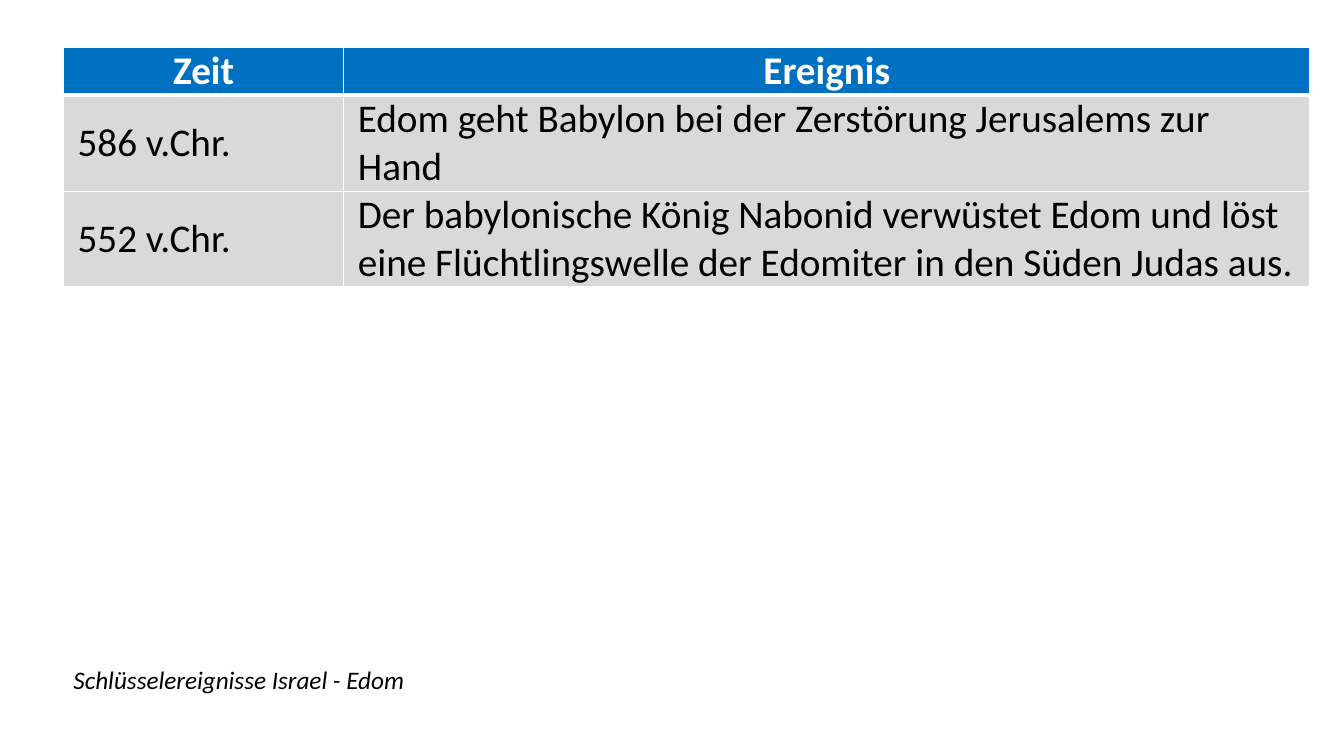
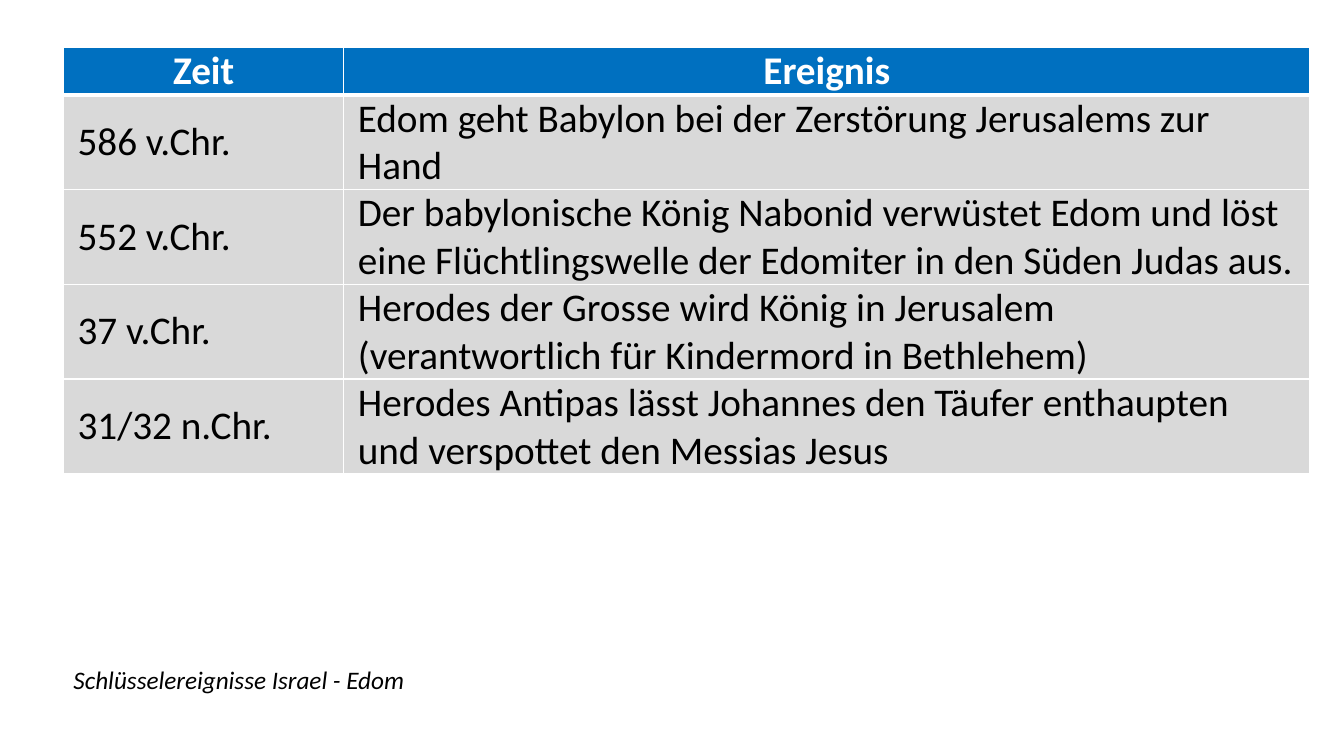
from pptx import Presentation
from pptx import util as u
from pptx.dml.color import RGBColor
from pptx.enum import text
from pptx.oxml import parse_xml
from pptx.oxml.ns import nsdecls

HEADER = ("Zeit", "Ereignis")
EVENTS = [
    ("586 v.Chr.", "Edom geht Babylon bei der Zerstörung Jerusalems zur Hand"),
    ("552 v.Chr.", "Der babylonische König Nabonid verwüstet Edom und löst "
                   "eine Flüchtlingswelle der Edomiter in den Süden Judas aus."),
    ("37 v.Chr.", "Herodes der Grosse wird König in Jerusalem "
                  "(verantwortlich für Kindermord in Bethlehem)"),
    ("31/32 n.Chr.", "Herodes Antipas lässt Johannes den Täufer enthaupten "
                     "und verspottet den Messias Jesus"),
]
EVENTS_SHOWN = (2, 4)
FOOTER = "Schlüsselereignisse Israel - Edom"

FONT = "Calibri"
BLUE, GREY, WHITE, BLACK = "0070C0", "D9D9D9", "FFFFFF", "000000"
LEFT, TABLE_TOP, FOOTER_TOP = 0.63, 0.47, 6.54
COLUMNS = (2.78, 9.58)
LINE_HEIGHT = 0.47
CELL_MARGIN = 0.14
THIN, THICK = 1, 3


def color(value):
    return RGBColor.from_string(value)


def write(frame, words, size=28, ink=BLACK, bold=False, italic=False,
          align=text.PP_ALIGN.LEFT):
    para = frame.paragraphs[0]
    para.alignment = align
    span = para.add_run()
    span.text = words
    font = span.font
    font.name, font.size = FONT, u.Pt(size)
    font.bold, font.italic = bold, italic
    font.color.rgb = color(ink)


def add_borders(cell, top, bottom):
    """Draw white cell edges; top and bottom are widths in points."""
    properties = cell._tc.get_or_add_tcPr()
    for side, width in zip("LRTB", (THIN, THIN, top, bottom)):
        properties.append(parse_xml(
            f'<a:ln{side} {nsdecls("a")} w="{u.Pt(width)}"><a:solidFill>'
            f'<a:srgbClr val="{WHITE}"/></a:solidFill></a:ln{side}>'))


def add_events(page, events):
    rows = [HEADER, *events]
    heights = [LINE_HEIGHT] + [2 * LINE_HEIGHT] * len(events)
    table = page.shapes.add_table(
        len(rows), len(COLUMNS), u.Inches(LEFT), u.Inches(TABLE_TOP),
        u.Inches(sum(COLUMNS)), u.Inches(sum(heights))).table
    for column, width in zip(table.columns, COLUMNS):
        column.width = u.Inches(width)
    for r, (row, height) in enumerate(zip(rows, heights)):
        table.rows[r].height = u.Inches(height)
        is_header = r == 0
        style = (dict(ink=WHITE, bold=True, align=text.PP_ALIGN.CENTER)
                 if is_header else {})
        for c, words in enumerate(row):
            cell = table.cell(r, c)
            add_borders(cell, top=THICK if r == 1 else THIN,
                        bottom=THICK if is_header else THIN)
            cell.fill.solid()
            cell.fill.fore_color.rgb = color(BLUE if is_header else GREY)
            cell.margin_left = cell.margin_right = u.Inches(CELL_MARGIN)
            cell.margin_top = cell.margin_bottom = 0
            cell.vertical_anchor = text.MSO_ANCHOR.MIDDLE
            write(cell.text_frame, words, **style)


def add_footer(page):
    box = page.shapes.add_textbox(u.Inches(LEFT), u.Inches(FOOTER_TOP),
                                  u.Inches(3.65), u.Inches(0.4))
    box.text_frame.word_wrap = False
    box.text_frame.auto_size = text.MSO_AUTO_SIZE.SHAPE_TO_FIT_TEXT
    write(box.text_frame, FOOTER, size=18, italic=True)


def main():
    deck = Presentation()
    deck.slide_width, deck.slide_height = u.Inches(13.33), u.Inches(7.5)
    for count in EVENTS_SHOWN:
        page = deck.slides.add_slide(deck.slide_layouts[6])
        add_events(page, EVENTS[:count])
        add_footer(page)
    deck.save("out.pptx")


if __name__ == "__main__":
    main()
